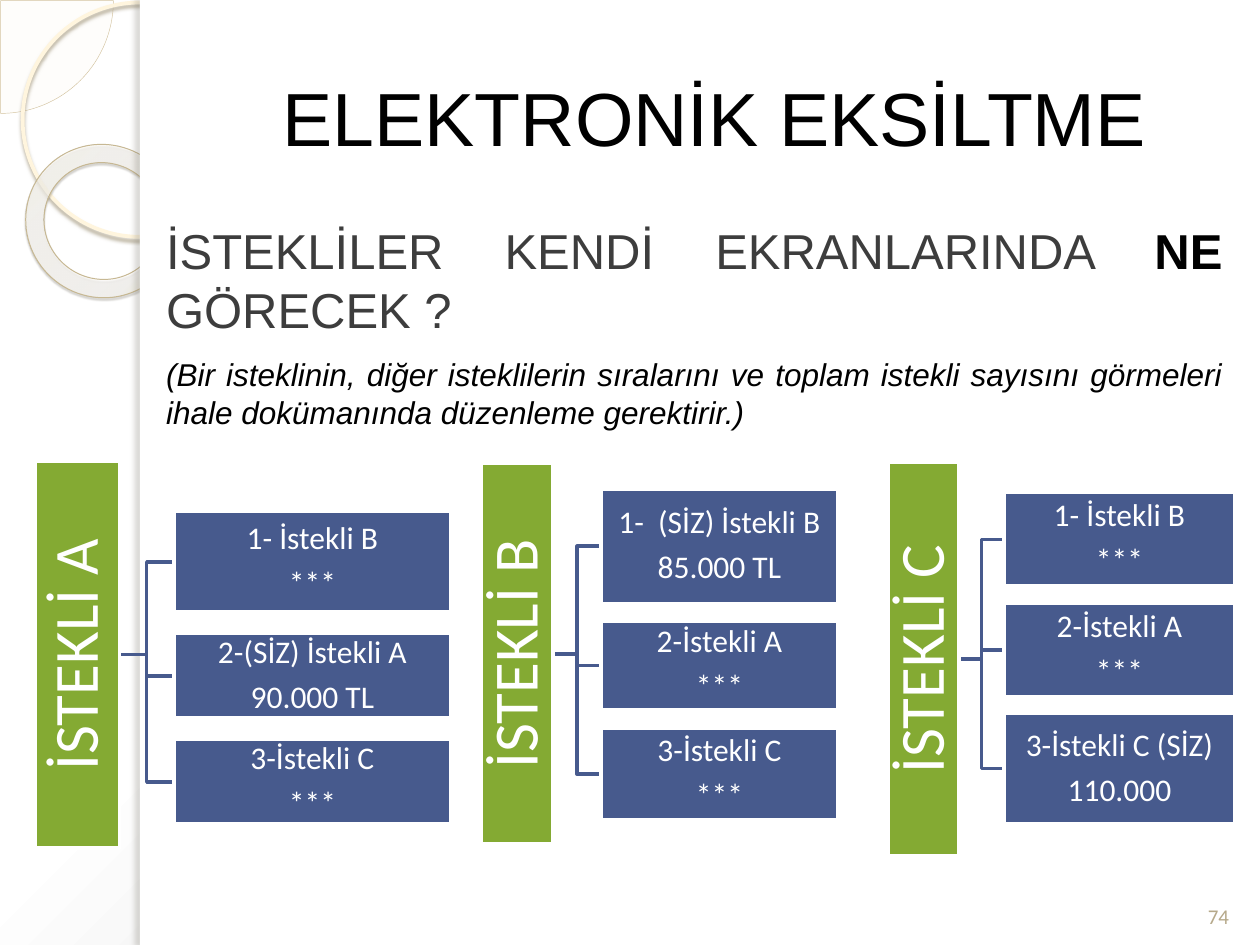
from dataclasses import dataclass

from lxml.etree import SubElement
from pptx import Presentation
from pptx.dml.color import RGBColor
from pptx.enum.shapes import MSO_SHAPE
from pptx.enum.text import MSO_ANCHOR, PP_ALIGN
from pptx.oxml.ns import qn
from pptx.util import Inches, Pt


@dataclass(frozen=True)
class Theme:
    heading_font: str = "Arial"
    label_font: str = "Calibri"
    black: str = "000000"
    white: str = "FFFFFF"
    gray: str = "3D3D3D"
    green: str = "84AA33"
    blue: str = "475A8D"
    number: str = "B6A98A"
    title_size: int = 43
    question_size: int = 28
    note_size: int = 18
    bidder_size: int = 36
    rank_size: int = 18
    number_size: int = 12


class SlideBuilder:
    def __init__(self, slide, theme):
        self.s = slide
        self.theme = theme

    def color(self, parent, rgb, alpha=100):
        clr = SubElement(parent, qn("a:srgbClr"), val=rgb)
        if alpha < 100:
            SubElement(clr, qn("a:alpha"), val=str(alpha * 1000))

    def radial(self, parent, stops, focus):
        """Replace the solid fill in parent with a circular gradient."""
        solid = parent.find(qn("a:solidFill"))
        grad = SubElement(parent, qn("a:gradFill"), rotWithShape="1")
        parent.replace(solid, grad)
        gs_list = SubElement(grad, qn("a:gsLst"))
        for pos, rgb, alpha in stops:
            gs = SubElement(gs_list, qn("a:gs"), pos=str(pos * 1000))
            self.color(gs, rgb, alpha)
        circle = SubElement(grad, qn("a:path"), path="circle")
        edges = {side: str(v * 1000) for side, v in zip("ltrb", focus)}
        SubElement(circle, qn("a:fillToRect"), **edges)

    def background(self, stops, focus):
        self.s.background.fill.solid()
        self.radial(self.s._element.find(".//" + qn("p:bgPr")), stops, focus)

    def shape(self, kind, at, fill=None, alpha=100, line=None, adj=(), shadow=None):
        """line is (colour, points); shadow is (colour, alpha, blur, distance, angle)."""
        sp = self.s.shapes.add_shape(kind, *map(Inches, at))
        sp.shadow.inherit = False
        for i, value in enumerate(adj):
            sp.adjustments[i] = value
        if fill:
            sp.fill.solid()
            sp.fill.fore_color.rgb = RGBColor.from_string(fill)
            if alpha < 100:
                clr = sp._element.spPr.find(qn("a:solidFill"))[0]
                SubElement(clr, qn("a:alpha"), val=str(alpha * 1000))
        else:
            sp.fill.background()
        self.outline(sp, line)
        if shadow:
            rgb, opacity, blur, dist, angle = shadow
            effects = sp._element.spPr.find(qn("a:effectLst"))
            outer = SubElement(effects, qn("a:outerShdw"), blurRad=str(Pt(blur)),
                               dist=str(Pt(dist)), dir=str(angle * 60000),
                               rotWithShape="0")
            self.color(outer, rgb, opacity)
        return sp

    def outline(self, sp, line):
        if line:
            sp.line.color.rgb = RGBColor.from_string(line[0])
            sp.line.width = Pt(line[1])
        else:
            sp.line.fill.background()

    def frame(self, sp, anchor, inset=None):
        tf = sp.text_frame
        tf.word_wrap = True
        tf.vertical_anchor = anchor
        if inset is not None:
            tf.margin_left = tf.margin_right = Inches(inset)
            tf.margin_top = tf.margin_bottom = Inches(inset)
        return tf

    def paragraph(self, tf, runs, size, font, align, before=0, after=0, spacing=None):
        """runs holds (text, colour, bold, italic) tuples."""
        p = tf.paragraphs[0] if not tf.paragraphs[0].runs else tf.add_paragraph()
        p.alignment = align
        p.space_before, p.space_after = Pt(before), Pt(after)
        if spacing:
            p.line_spacing = spacing
        for text, rgb, bold, italic in runs:
            r = p.add_run()
            r.text = text
            r.font.size, r.font.name = Pt(size), font
            r.font.bold, r.font.italic = bold, italic
            r.font.color.rgb = RGBColor.from_string(rgb)

    def textbox(self, at, anchor):
        return self.frame(self.s.shapes.add_textbox(*map(Inches, at)), anchor)

    def block(self, at, fill, lines, size, inset, rotation=0):
        t = self.theme
        sp = self.shape(MSO_SHAPE.RECTANGLE, at, fill, line=(t.white, 2))
        sp.rotation = rotation
        tf = self.frame(sp, MSO_ANCHOR.MIDDLE, inset)
        for text in lines:
            self.paragraph(tf, [(text, t.white, False, False)], size, t.label_font,
                           PP_ALIGN.CENTER, after=size * 0.35, spacing=0.9)

    def elbow(self, x1, y1, x2, y2):
        mid = (x1 + x2) / 2
        fb = self.s.shapes.build_freeform(Inches(x1), Inches(y1))
        bends = [(mid, y1), (mid, y2), (x2, y2)]
        fb.add_line_segments([(Inches(x), Inches(y)) for x, y in bends], close=False)
        sp = fb.convert_to_shape()
        sp.shadow.inherit = False
        sp.fill.background()
        self.outline(sp, (self.theme.blue, 2))

    def ranking(self, name, bar, left, width, boxes):
        """Vertical bidder bar linked to the ranks that this bidder sees."""
        t = self.theme
        x, y, w, h = bar
        middle = y + h / 2
        for top, height, _ in reversed(boxes):
            self.elbow(x + w, middle, left, top + height / 2)
        unrotated = (x + (w - h) / 2, middle - w / 2, h, w)
        self.block(unrotated, t.green, [name], t.bidder_size, 0.03, rotation=270)
        for top, height, lines in boxes:
            self.block((left, top, width, height), t.blue, lines, t.rank_size, 0.01)


HIDDEN = "***"
RANKINGS = [
    ("İSTEKLİ A", (0.28, 3.66, 0.67, 3.07), 1.38, 2.2, [
        (4.06, 0.8, ("1- İstekli B", HIDDEN)),
        (5.03, 0.67, ("2-(SİZ) İstekli A", "90.000 TL")),
        (5.87, 0.67, ("3-İstekli C", HIDDEN))]),
    ("İSTEKLİ B", (3.82, 3.68, 0.57, 3.02), 4.77, 1.88, [
        (3.88, 0.91, ("1-  (SİZ) İstekli B", "85.000 TL")),
        (4.93, 0.7, ("2-İstekli A", HIDDEN)),
        (5.78, 0.73, ("3-İstekli C", HIDDEN))]),
    ("İSTEKLİ C", (7.05, 3.67, 0.56, 3.12), 7.97, 1.83, [
        (3.91, 0.74, ("1- İstekli B", HIDDEN)),
        (4.79, 0.74, ("2-İstekli A", HIDDEN)),
        (5.66, 0.88, ("3-İstekli C (SİZ)", "110.000"))]),
]


def decorate(b):
    white = b.theme.white
    b.background([(0, white, 100), (40, white, 100), (100, "C5C5C5", 100)],
                 (-24, -20, 124, 120))
    b.shape(MSO_SHAPE.PIE, (-0.89, -0.89, 1.79, 1.79), "FEFAF4", 33,
            ("D3C39F", 0.25), adj=(0, 54.02))
    b.shape(MSO_SHAPE.OVAL, (0.18, 0.02, 1.86, 1.86), line=("FFF5DE", 2.15),
            shadow=("B0A68F", 85, 2, 2, 90))
    ring = b.shape(MSO_SHAPE.DONUT, (0.2, 1.15, 1.23, 1.21), white,
                   line=("C7B893", 0.58), adj=(0.12,),
                   shadow=("5A5444", 35, 1, 1.2, 75))
    ring.rotation = 38.6
    b.radial(ring._element.spPr,
             [(0, "FFFCF6", 70), (70, "FFFEFB", 55), (100, "F0D28E", 60)],
             (-408, -50, 508, 150))
    b.shape(MSO_SHAPE.RECTANGLE, (1.11, 0, 8.89, 7.5), white)
    b.shape(MSO_SHAPE.RECTANGLE, (1.11, 0, 0.08, 7.5), white,
            shadow=("736F63", 25, 3, 3, 180))


def write_text(b):
    t = b.theme
    tf = b.textbox((1.57, 0.3, 8.2, 1.25), MSO_ANCHOR.MIDDLE)
    b.paragraph(tf, [("ELEKTRONİK EKSİLTME", t.black, False, False)],
                t.title_size, t.heading_font, PP_ALIGN.CENTER)
    tf = b.textbox((9.42, 6.9, 0.5, 0.52), MSO_ANCHOR.BOTTOM)
    b.paragraph(tf, [("74", t.number, False, False)],
                t.number_size, t.label_font, PP_ALIGN.CENTER)
    tf = b.textbox((1.22, 1.7, 8.58, 1.96), MSO_ANCHOR.TOP)
    question = [("İSTEKLİLER KENDİ EKRANLARINDA ", t.gray, False, False),
                ("NE ", t.black, True, False),
                ("GÖRECEK ? ", t.gray, False, False)]
    note = [("(Bir isteklinin, diğer isteklilerin sıralarını ve toplam istekli "
             "sayısını görmeleri ihale dokümanında düzenleme gerektirir.)",
             t.black, False, True)]
    for runs, size in ((question, t.question_size), (note, t.note_size)):
        b.paragraph(tf, runs, size, t.heading_font, PP_ALIGN.JUSTIFY,
                    before=size * 0.2, after=6)


def main():
    prs = Presentation()
    prs.slide_width, prs.slide_height = Inches(10), Inches(7.5)
    b = SlideBuilder(prs.slides.add_slide(prs.slide_layouts[6]), Theme())
    decorate(b)
    write_text(b)
    for ranking in RANKINGS:
        b.ranking(*ranking)
    prs.save("out.pptx")


if __name__ == "__main__":
    main()
